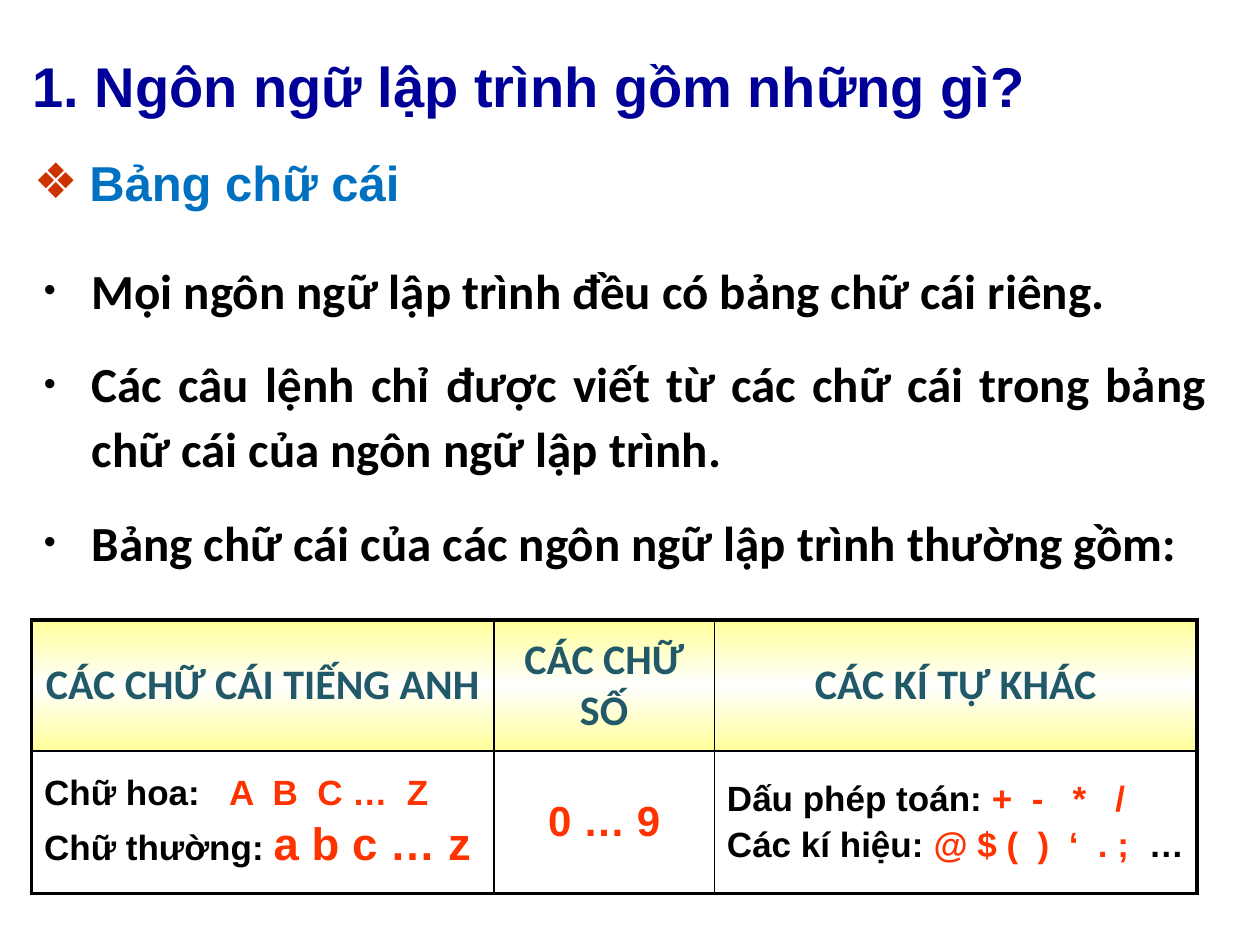
from lxml import etree
from pptx import Presentation
from pptx import util as u
from pptx.dml.color import RGBColor
from pptx.enum import text
from pptx.oxml.ns import qn

# Content
COLORS = {"title": "000099", "topic": "0070C0", "diamond": "CC3300", "ink": "000000",
          "header": "215968", "accent": "FF3300", "edge": "FFFF99", "middle": "FFFFFF"}
TITLE = "1. Ngôn ngữ lập trình gồm những gì?"
TOPIC = "Bảng chữ cái"
POINTS = [
    ("Mọi ngôn ngữ lập trình đều có bảng chữ cái riêng.", 9.08),
    ("Các câu lệnh chỉ được viết từ các chữ cái trong bảng chữ cái của ngôn ngữ lập trình.", 9.42),
    ("Bảng chữ cái của các ngôn ngữ lập trình thường gồm:", 9.58),
]
HEADERS = ["CÁC CHỮ CÁI TIẾNG ANH", "CÁC CHỮ SỐ", "CÁC KÍ TỰ KHÁC"]
# Each cell is a list of lines; each line is a list of (words, size, colour)
SYMBOLS = [
    [[("Chữ hoa:   ", 20, "ink"), ("A  B  C …  Z", 20, "accent")],
     [("Chữ thường: ", 20, "ink"), ("a b c … z", 26, "accent")]],
    [[("0 … 9", 24, "accent")]],
    [[("Dấu phép toán: ", 20, "ink"), ("+  -   *   /", 20, "accent")],
     [("Các kí hiệu: ", 20, "ink"), ("@ $ (  )  ‘  . ;  ", 20, "accent"), ("…", 20, "ink")]],
]

# Layout, in inches
LEFT = 0.25
POINT_TOP, POINT_STEP, POINT_HEIGHT = 1.72, 1, 1.11
TABLE_TOP = 4.92
COLUMNS, ROWS = [3.67, 1.75, 3.83], [1.04, 1.13]
OUTER, INNER = 2.25, 1  # border widths in points


def add_node(parent, tag, **attributes):
    return etree.SubElement(parent, qn(tag), {key: str(value) for key, value in attributes.items()})


def add_color(parent, name):
    add_node(parent, "a:srgbClr", val=COLORS[name])


def add_span(para, words, size, color, font="Arial"):
    span = para.add_run()
    span.text = words
    span.font.name, span.font.size, span.font.bold = font, u.Pt(size), True
    span.font.color.rgb = RGBColor.from_string(COLORS[color])


def add_bullet(para, mark, color, percent, indent):
    props = para._p.get_or_add_pPr()
    props.set("marL", str(u.Inches(indent)))
    props.set("indent", str(-u.Inches(indent)))
    add_color(add_node(props, "a:buClr"), color)
    add_node(props, "a:buSzPct", val=percent * 1000)
    add_node(props, "a:buFont", typeface="Arial")
    add_node(props, "a:buChar", char=mark)


def add_bullet_box(slide, place, words, font, color, bullet):
    box = slide.shapes.add_textbox(*map(u.Inches, place))
    frame = box.text_frame
    frame.word_wrap = True
    frame.auto_size = text.MSO_AUTO_SIZE.NONE
    frame.vertical_anchor = text.MSO_ANCHOR.MIDDLE
    para = frame.paragraphs[0]
    para.alignment = text.PP_ALIGN.JUSTIFY
    para.line_spacing = 1.1
    para.space_before = para.space_after = u.Pt(11)
    add_bullet(para, *bullet)
    add_span(para, words, 28, color, font)


def add_borders(cell, row, column):
    at_outer_edge = {"a:lnL": column == 0, "a:lnR": column == len(COLUMNS) - 1,
                     "a:lnT": row == 0, "a:lnB": row == len(ROWS) - 1}
    props = cell._tc.get_or_add_tcPr()
    for tag, outer in at_outer_edge.items():
        line = add_node(props, tag, w=u.Pt(OUTER if outer else INNER))
        add_color(add_node(line, "a:solidFill"), "ink")


def add_gradient(cell):
    gradient = add_node(cell._tc.get_or_add_tcPr(), "a:gradFill", rotWithShape=1)
    stops = add_node(gradient, "a:gsLst")
    for percent, name in [(0, "edge"), (50, "middle"), (100, "edge")]:
        add_color(add_node(stops, "a:gs", pos=percent * 1000), name)
    add_node(gradient, "a:lin", ang=90 * 60000, scaled=0)


def fill_cell(cell, lines, font, centered):
    cell.vertical_anchor = text.MSO_ANCHOR.MIDDLE
    frame = cell.text_frame
    for number, spans in enumerate(lines):
        para = frame.add_paragraph() if number else frame.paragraphs[0]
        para.alignment = text.PP_ALIGN.CENTER if centered else text.PP_ALIGN.LEFT
        para.space_before = u.Pt(4)
        for words, size, color in spans:
            add_span(para, words, size, color, font)


def add_symbol_table(slide):
    frame = slide.shapes.add_table(len(ROWS), len(COLUMNS), u.Inches(LEFT), u.Inches(TABLE_TOP),
                                   u.Inches(sum(COLUMNS)), u.Inches(sum(ROWS)))
    table = frame.table
    table.horz_banding = False
    for column, width in zip(table.columns, COLUMNS):
        column.width = u.Inches(width)
    for row, height in zip(table.rows, ROWS):
        row.height = u.Inches(height)
    for index, (header, lines) in enumerate(zip(HEADERS, SYMBOLS)):
        top, bottom = table.cell(0, index), table.cell(1, index)
        add_borders(top, 0, index)
        add_borders(bottom, 1, index)
        add_gradient(top)
        bottom.fill.background()
        fill_cell(top, [[(header, 24, "header")]], "Calibri", True)
        fill_cell(bottom, lines, "Arial", len(lines) == 1)


def main():
    deck = Presentation()
    deck.slide_width, deck.slide_height = u.Inches(10), u.Inches(7.5)
    slide = deck.slides.add_slide(deck.slide_layouts.get_by_name("Title Only"))

    # Title
    title = slide.shapes.title
    title.left, title.top, title.width, title.height = map(u.Inches, (0.16, 0.42, 9.25, 0.5))
    frame = title.text_frame
    frame.auto_size = text.MSO_AUTO_SIZE.NONE
    frame.vertical_anchor = text.MSO_ANCHOR.TOP
    para = frame.paragraphs[0]
    para.alignment = text.PP_ALIGN.LEFT
    para.line_spacing = 0.9
    para.space_before = u.Pt(3)
    add_span(para, TITLE, 32, "title")

    # Topic and its points
    add_bullet_box(slide, (0.17, 1.13, 3.92, 0.58), TOPIC, "Arial", "topic",
                   ("❖", "diamond", 100, 0.44))
    for index, (words, width) in enumerate(POINTS):
        place = (LEFT, POINT_TOP + index * POINT_STEP, width, POINT_HEIGHT)
        add_bullet_box(slide, place, words, "Calibri", "ink", ("•", "ink", 70, 0.38))

    # Table of symbols
    add_symbol_table(slide)
    deck.save("out.pptx")


if __name__ == "__main__":
    main()
